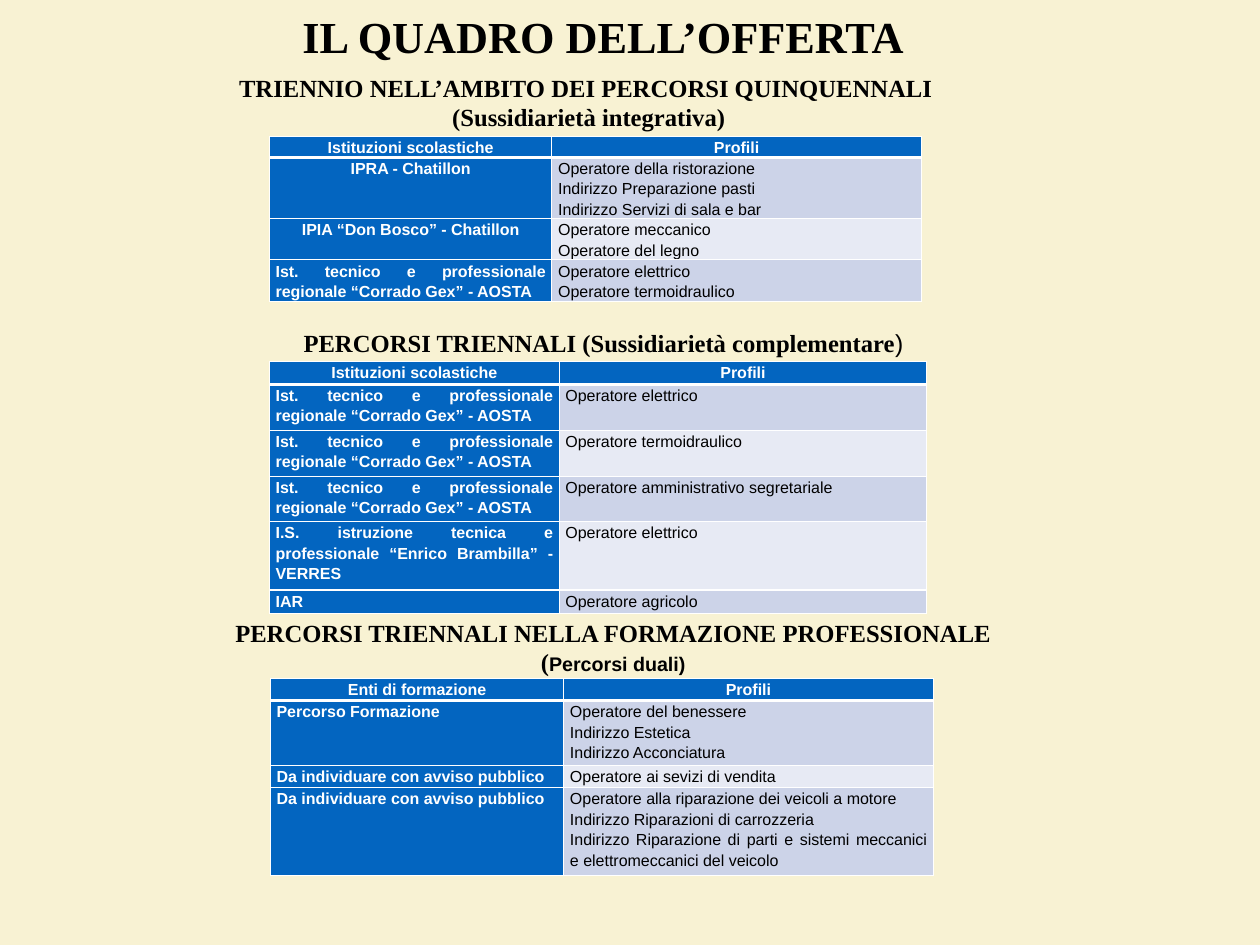
"""Build the slide on the training offer: a title and three headed tables."""
from lxml import etree
from pptx import Presentation
from pptx.dml.color import RGBColor
from pptx.enum.text import MSO_ANCHOR, MSO_AUTO_SIZE, PP_ALIGN
from pptx.oxml.ns import qn
from pptx.util import Cm, Pt

CENTER, JUSTIFY = PP_ALIGN.CENTER, PP_ALIGN.JUSTIFY
MIDDLE, NO_FIT = MSO_ANCHOR.MIDDLE, MSO_AUTO_SIZE.NONE
SERIF, SANS = "Times New Roman", "Arial"
CREAM, BLUE, WHITE, BLACK = "F8F2D3", "0365C0", "FFFFFF", "000000"
BANDS = ("CCD3E8", "E7EAF4")

TITLE = "IL QUADRO DELL’OFFERTA"
TITLE_BOX = (3.28, 0.1, 28.02, 1.83)
GEX = "Ist. tecnico e professionale regionale “Corrado Gex” - AOSTA"
PUBLIC_CALL = "Da individuare con avviso pubblico"

HEADINGS = [
    ((5.08, 1.93, 23.6, 2.01), [
        [("TRIENNIO NELL’AMBITO DEI PERCORSI QUINQUENNALI ", 20, SERIF, True)],
        [("(Sussidiarietà integrativa)", 20, SERIF, True)]]),
    ((8.18, 9.25, 18.24, 1.14), [
        [("PERCORSI TRIENNALI (Sussidiarietà complementare", 20, SERIF, True),
         (")", 20, SANS, False)]]),
    ((5.97, 17.55, 23.22, 2.01), [
        [("PERCORSI TRIENNALI NELLA FORMAZIONE PROFESSIONALE (", 20, SERIF, True),
         ("Percorsi duali)", 16, SANS, True)]]),
]

TABLES = [
    ((7.72, 3.91), (8.1, 10.59), [
        (0.6, CENTER, "Istituzioni scolastiche", ["Profili"]),
        (1.75, CENTER, "IPRA - Chatillon",
         ["Operatore della ristorazione", "Indirizzo Preparazione pasti",
          "Indirizzo Servizi di sala e bar"]),
        (1.18, CENTER, "IPIA “Don Bosco” - Chatillon",
         ["Operatore meccanico", "Operatore del legno"]),
        (1.18, JUSTIFY, GEX, ["Operatore elettrico", "Operatore termoidraulico"]),
    ]),
    ((7.72, 10.36), (8.31, 10.54), [
        (0.66, CENTER, "Istituzioni scolastiche", ["Profili"]),
        (1.32, JUSTIFY, GEX, ["Operatore elettrico"]),
        (1.32, JUSTIFY, GEX, ["Operatore termoidraulico"]),
        (1.3, JUSTIFY, GEX, ["Operatore amministrativo segretariale"]),
        (1.96, JUSTIFY,
         "I.S. istruzione tecnica e professionale “Enrico Brambilla” - VERRES",
         ["Operatore elettrico"]),
        (0.66, JUSTIFY, "IAR", ["Operatore agricolo"]),
    ]),
    ((7.75, 19.46), (8.41, 10.59), [
        (0.63, CENTER, "Enti di formazione", ["Profili"]),
        (1.87, JUSTIFY, "Percorso Formazione",
         ["Operatore del benessere", "Indirizzo Estetica",
          "Indirizzo Acconciatura"]),
        (0.63, JUSTIFY, PUBLIC_CALL, ["Operatore ai sevizi di vendita"]),
        (2.52, JUSTIFY, PUBLIC_CALL,
         ["Operatore alla riparazione dei veicoli a motore",
          "Indirizzo Riparazioni di carrozzeria",
          "Indirizzo Riparazione di parti e sistemi meccanici "
          "e elettromeccanici del veicolo"]),
    ]),
]


def rgb(color):
    return RGBColor.from_string(color)


def style_run(r, size, font, color, bold):
    r.font.size, r.font.name, r.font.bold = Pt(size), font, bold
    r.font.color.rgb = rgb(color)


def set_margins(obj, side, vertical):
    obj.margin_left = obj.margin_right = Cm(side)
    obj.margin_top = obj.margin_bottom = Cm(vertical)


def write_lines(sp, lines):
    tf = sp.text_frame
    tf.word_wrap, tf.auto_size = True, NO_FIT
    tf.vertical_anchor = MIDDLE
    set_margins(tf, 0.15, 0.15)
    for i, line in enumerate(lines):
        p = tf.paragraphs[0] if i == 0 else tf.add_paragraph()
        p.alignment = CENTER
        for text, size, font, bold in line:
            r = p.add_run()
            r.text = text
            style_run(r, size, font, BLACK, bold)


def add_borders(cell, top, bottom):
    tc_pr = cell._tc.get_or_add_tcPr()
    for tag, width in (("lnL", 1), ("lnR", 1), ("lnT", top), ("lnB", bottom)):
        ln = etree.SubElement(tc_pr, qn("a:" + tag), w=str(Pt(width)))
        fill = etree.SubElement(ln, qn("a:solidFill"))
        etree.SubElement(fill, qn("a:srgbClr"), val=WHITE)


def fill_cell(cell, lines, align, row, strong):
    set_margins(cell, 0.18, 0)
    add_borders(cell, 3 if row == 1 else 1, 3 if row == 0 else 1)
    cell.fill.solid()
    cell.fill.fore_color.rgb = rgb(BLUE if strong else BANDS[(row - 1) % 2])
    cell.text_frame.text = "\n".join(lines)
    for p in cell.text_frame.paragraphs:
        p.alignment, p.line_spacing = align, 1.15
        style_run(p.runs[0], 13, SANS, WHITE if strong else BLACK, strong)


def add_offer_table(slide, corner, widths, rows):
    height = sum(row[0] for row in rows)
    table = slide.shapes.add_table(
        len(rows), len(widths), Cm(corner[0]), Cm(corner[1]),
        Cm(sum(widths)), Cm(height)).table
    for column, width in zip(table.columns, widths):
        column.width = Cm(width)
    for i, (row_height, align, provider, profiles) in enumerate(rows):
        table.rows[i].height = Cm(row_height)
        fill_cell(table.cell(i, 0), [provider], align, i, True)
        fill_cell(table.cell(i, 1), profiles,
                  CENTER if i == 0 else JUSTIFY, i, i == 0)


def main():
    prs = Presentation()
    prs.slide_width, prs.slide_height = Cm(36.12), Cm(27.1)
    slide = prs.slides.add_slide(prs.slide_layouts[5])
    slide.background.fill.solid()
    slide.background.fill.fore_color.rgb = rgb(CREAM)

    title = slide.shapes.title
    title.left, title.top, title.width, title.height = map(Cm, TITLE_BOX)
    write_lines(title, [[(TITLE, 36, SERIF, True)]])
    for box, lines in HEADINGS:
        write_lines(slide.shapes.add_textbox(*map(Cm, box)), lines)
    for corner, widths, rows in TABLES:
        add_offer_table(slide, corner, widths, rows)
    prs.save("out.pptx")


if __name__ == "__main__":
    main()
